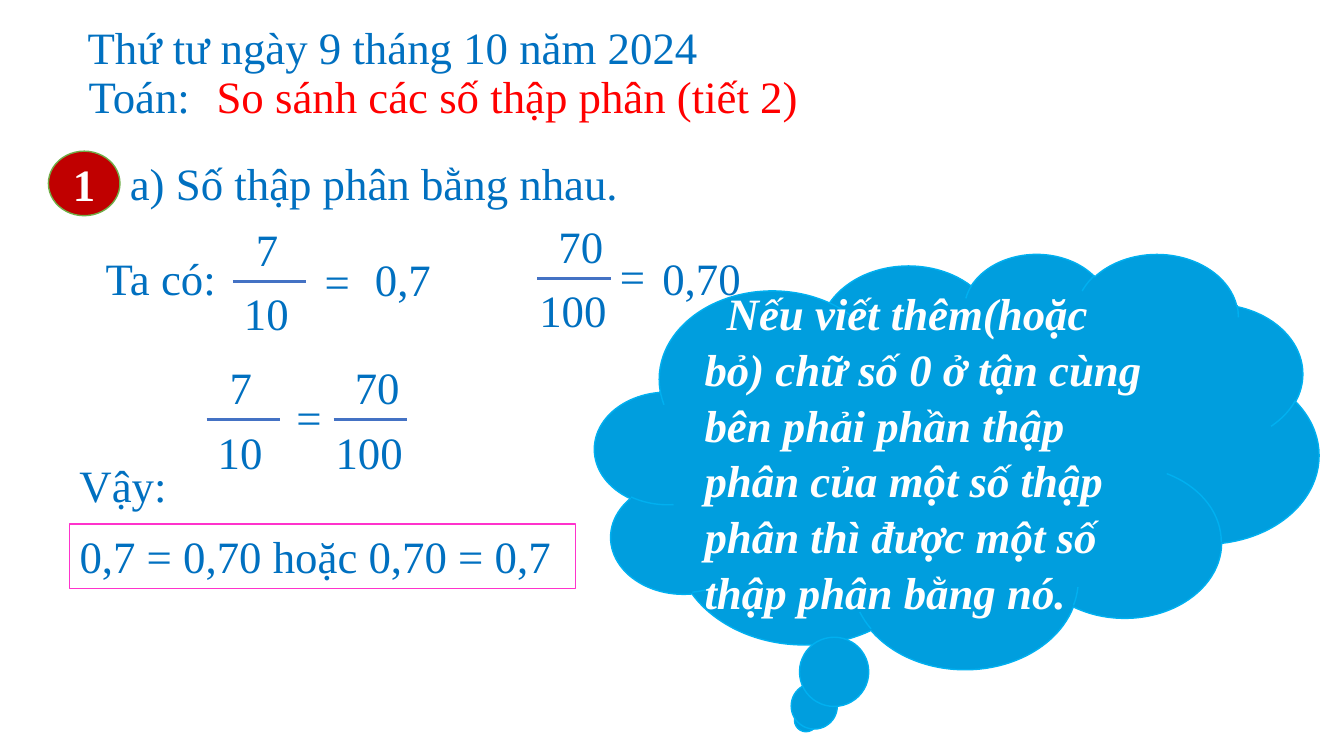
import pptx
import pptx.dml.color
import pptx.enum.shapes
import pptx.enum.text
import pptx.util
from dataclasses import dataclass
from pptx.util import Inches

SHAPE = pptx.enum.shapes.MSO_SHAPE
ALIGN = pptx.enum.text.PP_ALIGN
ANCHOR = pptx.enum.text.MSO_ANCHOR


@dataclass(frozen=True)
class Theme:
    font: str = "Times New Roman"
    size: int = 32
    text: str = "0070C0"
    topic: str = "FF0000"
    white: str = "FFFFFF"
    badge: str = "C00000"
    badge_line: str = "70AD47"
    bar: str = "4472C4"
    box_line: str = "FF33CC"
    cloud: str = "009EDE"
    cloud_line: str = "00B0F0"
    line_height: float = 0.64


THEME = Theme()


def rgb(value):
    return pptx.dml.color.RGBColor.from_string(value)


def write(sp, text, color, bold=False, italic=False, align=ALIGN.LEFT):
    tf = sp.text_frame
    tf.word_wrap = True
    p = tf.paragraphs[0]
    p.text = text
    p.alignment = align
    p.font.name = THEME.font
    p.font.size = pptx.util.Pt(THEME.size)
    p.font.bold = bold
    p.font.italic = italic
    p.font.color.rgb = rgb(color)
    return p


def add_text(shapes, x, y, width, text, color=THEME.text):
    sp = shapes.add_textbox(Inches(x), Inches(y), Inches(width), Inches(THEME.line_height))
    write(sp, text, color)


def add_filled(shapes, kind, x, y, width, height, fill, line):
    sp = shapes.add_shape(kind, Inches(x), Inches(y), Inches(width), Inches(height))
    sp.shadow.inherit = False
    sp.fill.solid()
    sp.fill.fore_color.rgb = rgb(fill)
    sp.line.color.rgb = rgb(line)
    sp.line.width = pptx.util.Pt(1)
    sp.text_frame.vertical_anchor = ANCHOR.MIDDLE
    return sp


def add_fraction(shapes, x, y, numerator, denominator):
    """Group a numerator, a denominator and the bar that starts at (x, y)."""
    shapes = shapes.add_group_shape().shapes
    wide = len(denominator) > 2
    add_text(shapes, x + (0.11 if wide else 0.13), y - THEME.line_height, 0.71, numerator)
    add_text(shapes, x + (-0.08 if wide else 0.01), y, 1.11 if wide else 0.71, denominator)
    bar = shapes.add_connector(pptx.enum.shapes.MSO_CONNECTOR.STRAIGHT,
                               Inches(x), Inches(y), Inches(x + 0.73), Inches(y))
    bar.line.color.rgb = rgb(THEME.bar)
    bar.line.width = pptx.util.Pt(2.25)
    pptx.oxml.ns  # namespace helpers used for the effect list below
    bar._element.spPr.append(pptx.oxml.parse_xml(
        '<a:effectLst xmlns:a="http://schemas.openxmlformats.org/drawingml/2006/main"/>'))


def add_heading(shapes):
    add_text(shapes, 0.77, 0.15, 8.56, "Thứ tư ngày 9 tháng 10 năm 2024")
    add_text(shapes, 0.78, 0.63, 1.27, "Toán:")
    add_text(shapes, 2.05, 0.63, 6.04, "So sánh các số thập phân (tiết 2)", THEME.topic)
    badge = add_filled(shapes, SHAPE.OVAL, 0.48, 1.5, 0.71, 0.64,
                       THEME.badge, THEME.badge_line)
    write(badge, "1", THEME.white, bold=True, align=ALIGN.CENTER)
    add_text(shapes, 1.19, 1.5, 5.2, "a) Số thập phân bằng nhau.")


def add_working(shapes):
    add_text(shapes, 0.95, 2.44, 1.59, "Ta có:")
    for x, y, numerator, denominator in (
            (2.31, 2.79, "7", "10"), (5.33, 2.76, "70", "100"),
            (2.05, 4.16, "7", "10"), (3.31, 4.16, "70", "100")):
        add_fraction(shapes, x, y, numerator, denominator)
    for x, y in ((3.12, 2.47), (6.05, 2.42), (2.84, 3.82)):
        add_text(shapes, x, y, 0.71, "=")
    add_text(shapes, 3.62, 2.45, 1.04, "0,7")
    add_text(shapes, 6.47, 2.44, 1.11, "0,70")


def add_conclusion(shapes):
    add_text(shapes, 0.69, 4.49, 1.27, "Vậy:")
    box = add_filled(shapes, SHAPE.RECTANGLE, 0.69, 5.2, 5.02, THEME.line_height,
                     THEME.white, THEME.box_line)
    box.text_frame.vertical_anchor = ANCHOR.TOP
    write(box, "0,7 = 0,70 hoặc 0,70 = 0,7", THEME.text)


def add_rule_cloud(shapes):
    cloud = add_filled(shapes, SHAPE.CLOUD_CALLOUT, 5.9, 2.51, 7.18, 4.12,
                       THEME.cloud, THEME.cloud_line)
    p = write(cloud, "Nếu viết thêm(hoặc bỏ) chữ số 0 ở tận cùng bên phải phần thập phân "
              "của một số thập phân thì được một số thập phân bằng nó.",
              THEME.white, bold=True, italic=True)
    p.line_spacing = 1.04
    p._p.get_or_add_pPr().set("indent", str(Inches(0.22)))


def main():
    prs = pptx.Presentation()
    prs.slide_width, prs.slide_height = Inches(13.33), Inches(7.5)
    s = prs.slides.add_slide(prs.slide_layouts[6])
    add_heading(s.shapes)
    add_working(s.shapes)
    add_conclusion(s.shapes)
    add_rule_cloud(s.shapes)
    prs.save("out.pptx")


if __name__ == "__main__":
    main()
